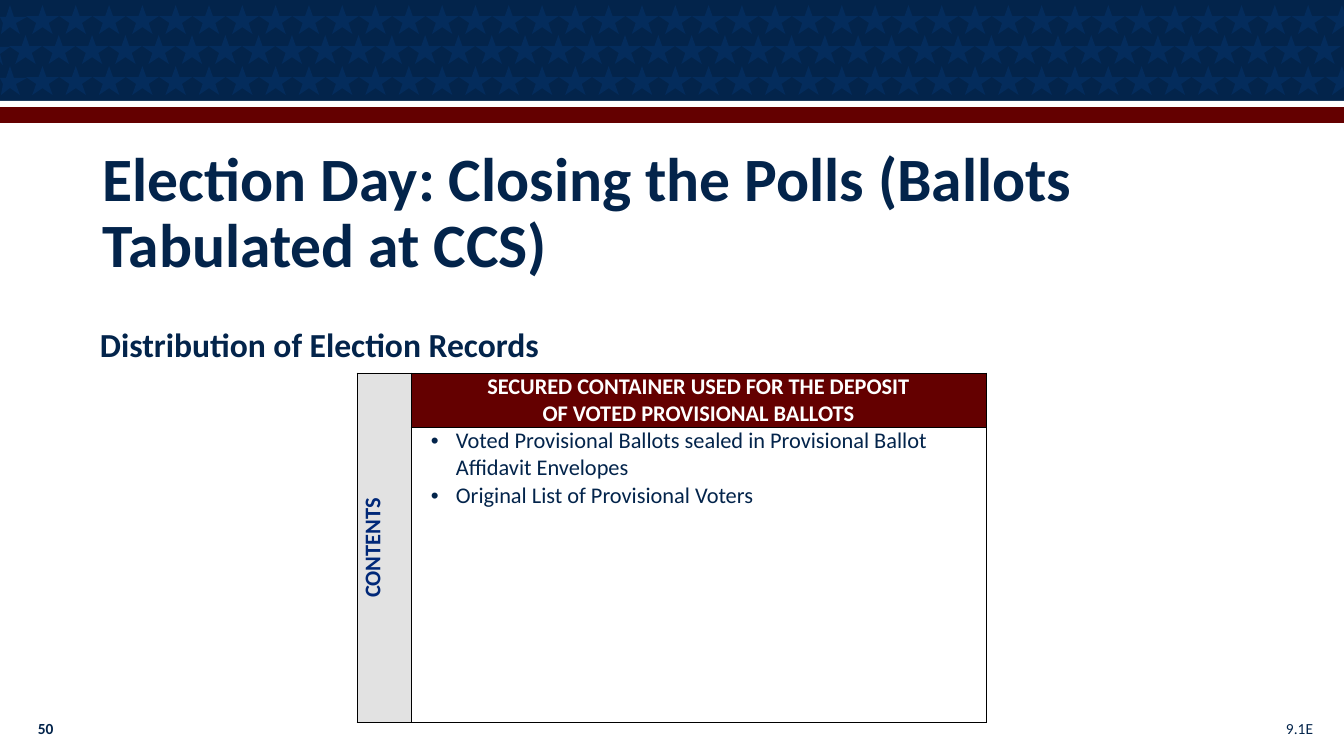
from lxml import etree
from pptx import Presentation
from pptx import util as u
from pptx.dml.color import RGBColor
from pptx.enum import shapes, text
from pptx.oxml import ns

NAVY = RGBColor(0x03, 0x24, 0x4B)
STAR = RGBColor(0x04, 0x2C, 0x5C)
MAROON = RGBColor(0x64, 0x00, 0x00)
BLUE = RGBColor(0x00, 0x28, 0x78)
GRAY = RGBColor(0xE2, 0xE2, 0xE2)
WHITE = RGBColor(0xFF, 0xFF, 0xFF)
BLACK = RGBColor(0x00, 0x00, 0x00)

TITLE = "Election Day: Closing the Polls (Ballots Tabulated at CCS)"
SUBTITLE = "Distribution of Election Records"
SIDE = "CONTENTS"
HEADER = ["SECURED CONTAINER USED FOR THE DEPOSIT", "OF VOTED PROVISIONAL BALLOTS"]
CONTENTS = ["Voted Provisional Ballots sealed in Provisional Ballot Affidavit Envelopes",
            "Original List of Provisional Voters"]
PAGE, SECTION = "50", "9.1E"

STAR_ROWS = [(5, 26, 39), (35, 9, 40), (66, 26, 39)]
STAR_W, STAR_H, STAR_STEP = 33, 29, 1299 / 39
LEFT_STAR = [(0, 12), (6, 12), (10, 0), (14, 12), (27, 12),
             (16, 18), (20, 29), (10, 22), (1, 29), (3, 18)]
LEFT_TIP = [(0, 12), (10, 12), (0, 19), (3, 30), (0, 27)]
RIGHT_STAR = [(1326, 11), (1338, 11), (1342, 0), (1344, 6),
              (1344, 21), (1342, 22), (1332, 29), (1336, 18)]
EDGE_STARS = [(5, LEFT_STAR), (66, LEFT_STAR), (35, LEFT_TIP),
              (5, RIGHT_STAR), (66, RIGHT_STAR)]

PX = 914400 / 100.8
ALIGN, ANCHOR = text.PP_ALIGN, text.MSO_ANCHOR


def px(n):
    return u.Emu(round(n * PX))


def write(tf, paras, size=16, color=NAVY, bold=False, align=ALIGN.LEFT,
          line=None, margin=0, indent=0, bullet=None):
    for i, words in enumerate(paras):
        p = tf.paragraphs[0] if i == 0 else tf.add_paragraph()
        p.alignment = align
        if line:
            p.line_spacing = line
        if bullet:
            pPr = p._p.get_or_add_pPr()
            pPr.set("marL", str(px(margin)))
            pPr.set("indent", str(px(indent)))
            etree.SubElement(pPr, ns.qn("a:buFont"), typeface="Arial")
            etree.SubElement(pPr, ns.qn("a:buChar"), char=bullet)
        r = p.add_run()
        r.text = words
        r.font.size, r.font.name, r.font.bold = u.Pt(size), "Calibri", bold
        r.font.color.rgb = color


def paint(sp, color):
    sp.shadow.inherit = False
    sp.fill.solid()
    sp.fill.fore_color.rgb = color
    sp.line.fill.background()


def add_preset(s, kind, box, color):
    paint(s.shapes.add_shape(kind, *map(px, box)), color)


def add_text(s, box, words, anchor=ANCHOR.TOP, **fmt):
    tf = s.shapes.add_textbox(*map(px, box)).text_frame
    tf.word_wrap = True
    tf.vertical_anchor = anchor
    write(tf, [words], **fmt)


def format_cell(cell, fill=None, side=7, anchor=ANCHOR.TOP):
    cell.margin_left = cell.margin_right = px(side)
    cell.margin_top = cell.margin_bottom = 0
    cell.vertical_anchor = anchor
    tcPr = cell._tc.get_or_add_tcPr()
    for name in "LRTB":
        ln = etree.SubElement(tcPr, ns.qn("a:ln" + name), w=str(u.Pt(0.75)))
        solid = etree.SubElement(ln, ns.qn("a:solidFill"))
        etree.SubElement(solid, ns.qn("a:srgbClr"), val=str(BLACK))
    if fill is None:
        cell.fill.background()
    else:
        cell.fill.solid()
        cell.fill.fore_color.rgb = fill


def add_banner(s):
    rect, star = shapes.MSO_SHAPE.RECTANGLE, shapes.MSO_SHAPE.STAR_5_POINT
    add_preset(s, rect, (0, 0, 1344, 101), NAVY)
    add_preset(s, rect, (0, 106, 1344, 17), MAROON)
    for top, left, count in STAR_ROWS:
        for i in range(count):
            add_preset(s, star, (left + i * STAR_STEP, top, STAR_W, STAR_H), STAR)
    for top, points in EDGE_STARS:
        outline = [(x, top + y) for x, y in points]
        fb = s.shapes.build_freeform(*outline[0], scale=PX)
        fb.add_line_segments(outline[1:], close=True)
        paint(fb.convert_to_shape(), STAR)
    add_preset(s, rect, (0, 101, 1344, 6), WHITE)


def add_records_table(s):
    table = s.shapes.add_table(2, 2, *map(px, (357, 373, 629, 350))).table
    table.first_row = table.horz_banding = False
    for col, width in zip(table.columns, (54, 575)):
        col.width = px(width)
    for row, height in zip(table.rows, (54, 296)):
        row.height = px(height)
    contents, below = table.cell(0, 0), table.cell(1, 0)
    header, body = table.cell(0, 1), table.cell(1, 1)
    contents.merge(below)
    for cell in (contents, below):
        format_cell(cell, GRAY, 5, ANCHOR.MIDDLE)
        cell._tc.get_or_add_tcPr().set("vert", "vert270")
    format_cell(header, MAROON, anchor=ANCHOR.MIDDLE)
    format_cell(body)
    write(contents.text_frame, [SIDE], color=BLUE, bold=True,
          align=ALIGN.CENTER, line=1.07)
    write(header.text_frame, HEADER, color=WHITE, bold=True, align=ALIGN.CENTER)
    write(body.text_frame, CONTENTS, margin=38, indent=-25, bullet="•")


def main():
    prs = Presentation()
    prs.slide_width, prs.slide_height = px(1344), px(756)
    s = prs.slides.add_slide(prs.slide_layouts[6])
    add_banner(s)
    add_text(s, (93, 143, 1159, 80), TITLE, size=44, bold=True, line=0.9)
    add_text(s, (90, 316, 1175, 51), SUBTITLE, size=24, bold=True, line=1.07)
    add_records_table(s)
    add_text(s, (28, 708, 85, 40), PAGE, anchor=ANCHOR.MIDDLE, size=11, bold=True)
    add_text(s, (1026, 708, 297, 40), SECTION, anchor=ANCHOR.MIDDLE, size=11,
             align=ALIGN.RIGHT)
    prs.save("out.pptx")


if __name__ == "__main__":
    main()
